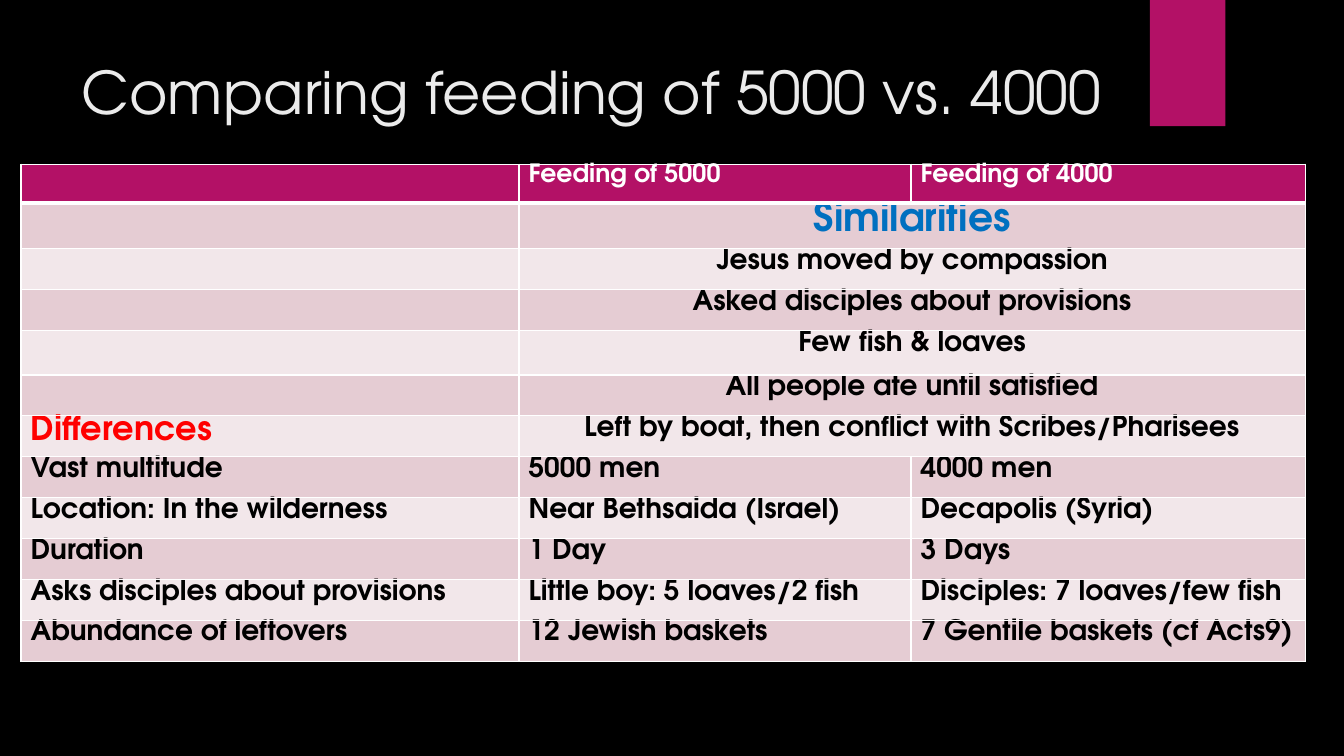
from dataclasses import dataclass

from lxml.etree import SubElement
from pptx import Presentation
from pptx.dml.color import RGBColor as RGB
from pptx.enum.shapes import MSO_SHAPE as SHAPE
from pptx.enum.text import MSO_ANCHOR as ANCHOR, MSO_AUTO_SIZE as AUTO, PP_ALIGN as ALIGN
from pptx.oxml.ns import qn
from pptx.util import Cm, Pt


@dataclass(frozen=True)
class Theme:
    font: str = "TeX Gyre Adventor"
    background: str = "000000"
    accent: str = "B31166"
    title: str = "EBEBEB"
    grid: str = "FFFFFF"
    header: str = "FFFFFF"
    body: str = "000000"
    similar: str = "0070C0"
    differ: str = "FF0000"
    bands: tuple = ("E5CCD3", "F2E7EA")
    title_size: int = 42
    header_size: int = 18
    body_size: int = 20
    similar_size: int = 28
    differ_size: int = 24


T = Theme()

HEADINGS = ("", "Feeding of 5000", "Feeding of 4000")
ROWS = (
    ("", "Similarities"),
    ("", "Jesus moved by compassion"),
    ("", "Asked disciples about provisions"),
    ("", "Few fish & loaves"),
    ("", "All people ate until satisfied"),
    ("Differences", "Left by boat, then conflict with Scribes/Pharisees"),
    ("Vast multitude", "5000 men", "4000 men"),
    ("Location: In the wilderness", "Near Bethsaida (Israel)", "Decapolis (Syria)"),
    ("Duration", "1 Day", "3 Days"),
    ("Asks disciples about provisions", "Little boy: 5 loaves/2 fish", "Disciples: 7 loaves/few fish"),
    ("Abundance of leftovers", "12 Jewish baskets", "7 Gentile baskets (cf Acts9)"),
)
SPECIAL = {
    "Similarities": (T.similar_size, T.similar),
    "Differences": (T.differ_size, T.differ),
}
COLUMN_SHARES = (0.39, 0.31, 0.31)
COLUMN_WIDTHS = (12.55, 9.88, 9.93)
ROW_HEIGHT = 1.03
ROW_HEIGHTS = {0: 0.97, 1: 1.16, 4: 1.12}


def add_run(p, text, size, color, bold=False):
    r = p.add_run()
    r.text = text
    r.font.name = T.font
    r.font.size = Pt(size)
    r.font.bold = bold
    r.font.color.rgb = RGB.from_string(color)


def set_borders(cell, top=1, bottom=1):
    tcPr = cell._tc.get_or_add_tcPr()
    for side, width in (("L", 1), ("R", 1), ("T", top), ("B", bottom)):
        ln = SubElement(tcPr, qn(f"a:ln{side}"), w=str(Pt(width)))
        fill = SubElement(ln, qn("a:solidFill"))
        SubElement(fill, qn("a:srgbClr"), val=T.grid)


def add_title(slide, left, top, width, height):
    sp = slide.shapes.title
    sp.left, sp.top, sp.width, sp.height = Cm(left), Cm(top), Cm(width), Cm(height)
    tf = sp.text_frame
    tf.word_wrap = True
    tf.auto_size = AUTO.NONE
    tf.vertical_anchor = ANCHOR.TOP
    p = tf.paragraphs[0]
    p.alignment = ALIGN.LEFT
    add_run(p, "Comparing feeding of 5000 vs. 4000", T.title_size, T.title)


def add_accent(slide, left, top, width, height):
    sp = slide.shapes.add_shape(SHAPE.RECTANGLE, Cm(left), Cm(top), Cm(width), Cm(height))
    sp.shadow.inherit = False
    sp.fill.solid()
    sp.fill.fore_color.rgb = RGB.from_string(T.accent)
    sp.line.fill.background()


def fill_cell(cell, text, size, color, fill, align, top=1, bottom=1):
    set_borders(cell, top, bottom)
    cell.fill.solid()
    cell.fill.fore_color.rgb = RGB.from_string(fill)
    cell.margin_left = cell.margin_right = Cm(0.24)
    cell.margin_top = cell.margin_bottom = Cm(0)
    cell.vertical_anchor = ANCHOR.TOP
    p = cell.text_frame.paragraphs[0]
    p.alignment = align
    if text:
        add_run(p, text, size, color, bold=True)


def add_comparison(slide, left, top, width, height):
    frame = slide.shapes.add_table(
        len(ROWS) + 1, len(HEADINGS), Cm(left), Cm(top), Cm(width), Cm(height))
    table = frame.table
    for column, share in zip(table.columns, COLUMN_WIDTHS):
        column.width = Cm(width * share / sum(COLUMN_WIDTHS))
    for i, row in enumerate(table.rows):
        row.height = Cm(ROW_HEIGHTS.get(i, ROW_HEIGHT))
    for j, text in enumerate(HEADINGS):
        fill_cell(table.cell(0, j), text, T.header_size, T.header, T.accent, ALIGN.LEFT, bottom=3)
    for i, texts in enumerate(ROWS, 1):
        shared = len(texts) == 2
        if shared:
            table.cell(i, 1).merge(table.cell(i, 2))
        for j, text in enumerate(texts):
            size, color = SPECIAL.get(text, (T.body_size, T.body))
            align = ALIGN.CENTER if shared and j else ALIGN.LEFT
            fill_cell(table.cell(i, j), text, size, color, T.bands[(i - 1) % 2], align,
                      top=3 if i == 1 else 1)


def add_comparison_slide(prs):
    slide = prs.slides.add_slide(prs.slide_layouts[5])
    slide.background.fill.solid()
    slide.background.fill.fore_color.rgb = RGB.from_string(T.background)
    add_accent(slide, 28.98, 0, 1.9, 3.18)
    add_title(slide, 1.8, 1.27, 26.82, 3.89)
    add_comparison(slide, 0.53, 4.14, 32.36, 12.52)


def main():
    prs = Presentation()
    prs.slide_width, prs.slide_height = Cm(33.87), Cm(19.05)
    add_comparison_slide(prs)
    prs.save("out.pptx")


if __name__ == "__main__":
    main()
